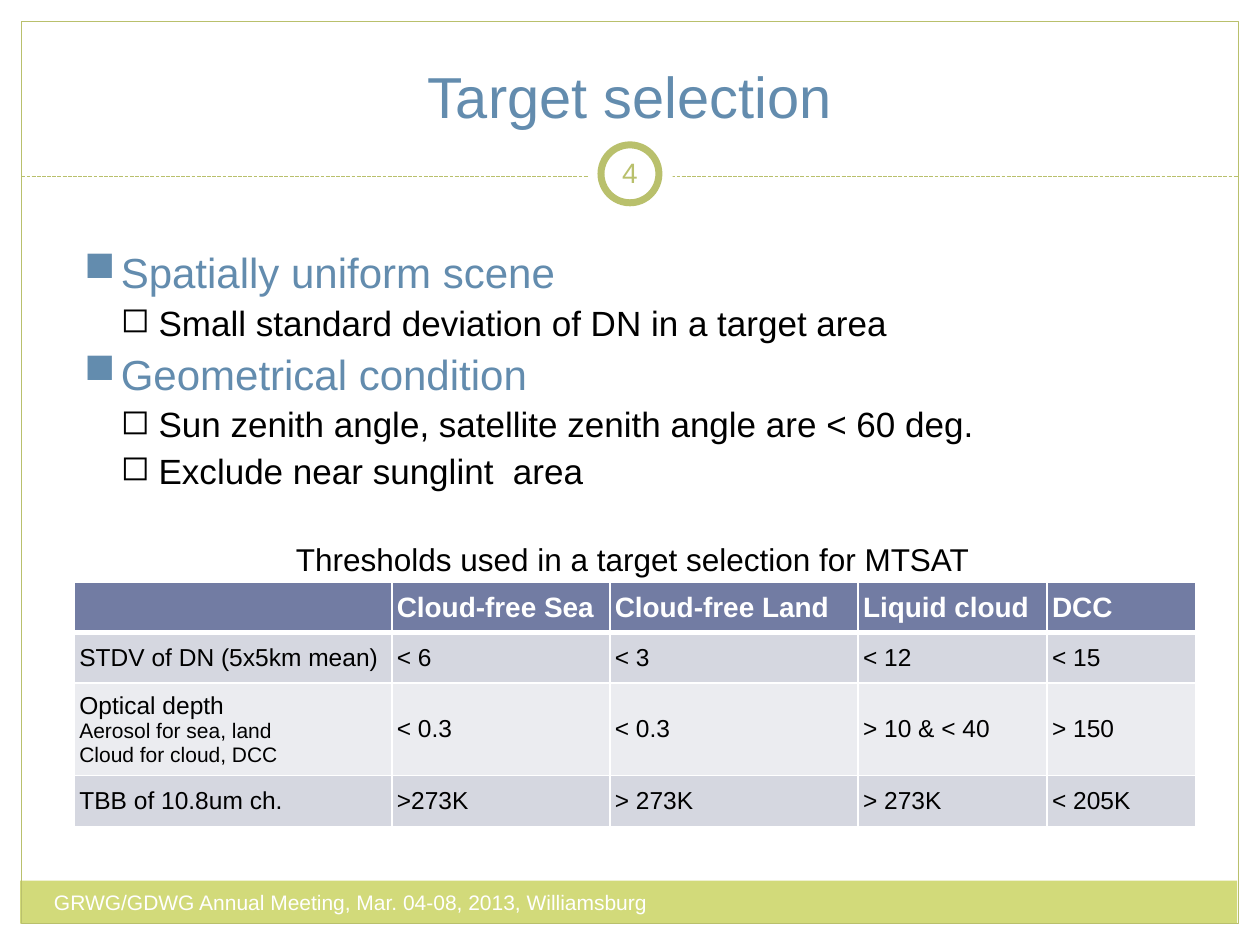
from lxml.etree import SubElement
from pptx import Presentation
from pptx.dml.color import RGBColor
from pptx.enum.dml import MSO_LINE
from pptx.enum.shapes import MSO_CONNECTOR, MSO_SHAPE
from pptx.enum.text import MSO_ANCHOR, PP_ALIGN
from pptx.oxml.ns import qn
from pptx.util import Inches, Pt

COLORS = {
    "white": "FFFFFF", "black": "000000", "blue": "638CAE",
    "olive": "B9C06C", "lime": "D2DA7A",
    "header": "727CA3", "odd": "D5D7E0", "even": "EBECF0",
}
# The page is a grid of 100 columns by 75 rows
COLUMNS, ROWS = 100, 75
UNIT = Inches(0.1)


def grid(*cells):
    return [round(cell * UNIT) for cell in cells]


def write(frame, lines, align=PP_ALIGN.LEFT, bold=False):
    """Fill a text frame with (text, size, color) lines."""
    for index, (text, size, color) in enumerate(lines):
        para = frame.add_paragraph() if index else frame.paragraphs[0]
        para.text = text
        para.alignment = align
        para.font.name = "Arial"
        para.font.size = Pt(size)
        para.font.bold = bold
        para.font.color.rgb = RGBColor.from_string(COLORS[color])


deck = Presentation()
deck.slide_width, deck.slide_height = grid(COLUMNS, ROWS)
page = deck.slides.add_slide(deck.slide_layouts[6])

# Footer band, page frame, divider and number ring
rule = page.shapes.add_connector(MSO_CONNECTOR.STRAIGHT, *grid(1.7, 14, 98.3, 14))
rule.line.color.rgb = RGBColor.from_string(COLORS["olive"])
rule.line.width = Pt(0.75)
rule.line.dash_style = MSO_LINE.SQUARE_DOT
SubElement(rule._element.spPr, qn("a:effectLst"))

decorations = [
    (MSO_SHAPE.RECTANGLE, (1.6, 69.9, 96.6, 3.4), "lime", None),
    (MSO_SHAPE.RECTANGLE, (1.7, 1.7, 96.6, 71.6), None, 0.75),
    (MSO_SHAPE.OVAL, (46.7, 10.5, 6.7, 6.7), "white", None),
    (MSO_SHAPE.OVAL, (47.7, 11.5, 4.6, 4.6), "white", 4),
]
for preset, area, fill, width in decorations:
    shape = page.shapes.add_shape(preset, *grid(*area))
    shape.shadow.inherit = False
    if fill:
        shape.fill.solid()
        shape.fill.fore_color.rgb = RGBColor.from_string(COLORS[fill])
    else:
        shape.fill.background()
    if width:
        shape.line.color.rgb = RGBColor.from_string(COLORS["olive"])
        shape.line.width = Pt(width)
    else:
        shape.line.fill.background()

# Title, caption, footer and page number
labels = [
    ("Target selection", 33, "blue", (3.3, 2.5, 93.3, 8.3), PP_ALIGN.CENTER, MSO_ANCHOR.BOTTOM),
    ("Thresholds used in a target selection for MTSAT", 18, "black",
     (22.5, 42.4, 56, 4), PP_ALIGN.LEFT, MSO_ANCHOR.TOP),
    ("GRWG/GDWG Annual Meeting, Mar. 04-08, 2013, Williamsburg", 12, "white",
     (3.3, 70.1, 60.1, 4), PP_ALIGN.LEFT, MSO_ANCHOR.TOP),
    ("4", 16, "olive", (47.5, 11.3, 5, 4.8), PP_ALIGN.CENTER, MSO_ANCHOR.MIDDLE),
]
for text, size, color, area, align, anchor in labels:
    frame = page.shapes.add_textbox(*grid(*area)).text_frame
    frame.word_wrap = True
    frame.vertical_anchor = anchor
    write(frame, [(text, size, color)], align)

# Bulleted criteria: headings and their details
criteria = [
    ("Spatially uniform scene", 24, "blue"),
    ("Small standard deviation of DN in a target area", 20, "black"),
    ("Geometrical condition", 24, "blue"),
    ("Sun zenith angle, satellite zenith angle are < 60 deg.", 20, "black"),
    ("Exclude near sunglint  area", 20, "black"),
]
frame = page.shapes.add_textbox(*grid(5.7, 18.7, 73.2, 21)).text_frame
frame.word_wrap = False
write(frame, criteria)
for para, (_, _, color) in zip(frame.paragraphs, criteria):
    margin, indent, mark = (2.9, -2.9, "■") if color == "blue" else (5.9, -3, "◻")
    para.line_spacing = 1.1
    properties = para._p.get_or_add_pPr()
    for name, length in zip(("marL", "indent"), grid(margin, indent)):
        properties.set(name, str(length))
    SubElement(properties, qn("a:buChar"), char=mark)

# Threshold table
thresholds = [
    ["", "Cloud-free Sea", "Cloud-free Land", "Liquid cloud", "DCC"],
    ["STDV of DN (5x5km mean)", "< 6", "< 3", "< 12", "< 15"],
    ["Optical depth\nAerosol for sea, land\nCloud for cloud, DCC",
     "< 0.3", "< 0.3", "> 10 & < 40", "> 150"],
    ["TBB of 10.8um ch.", ">273K", "> 273K", "> 273K", "< 205K"],
]
widths = grid(25.2, 17.3, 19.7, 15, 11.8)
heights = grid(4.0, 4.0, 6.9, 4.1)
table = page.shapes.add_table(
    len(heights), len(widths), *grid(5.9, 46.2), sum(widths), sum(heights)).table
for column, width in zip(table.columns, widths):
    column.width = width
for row, height in zip(table.rows, heights):
    row.height = height

for r, values in enumerate(thresholds):
    fill = "header" if r == 0 else "odd" if r % 2 else "even"
    for c, value in enumerate(values):
        cell = table.cell(r, c)
        cell.vertical_anchor = MSO_ANCHOR.MIDDLE
        cell.margin_left = cell.margin_right = Inches(0.04)
        cell.margin_top = cell.margin_bottom = Inches(0.05)
        # Notes below the first line of a cell are smaller
        first, *notes = value.split("\n")
        size, color = (16, "white") if r == 0 else (14, "black")
        lines = [(first, size, color)] + [(note, 12, color) for note in notes]
        write(cell.text_frame, lines, bold=r == 0)
        # Borders come before the fill in the cell properties
        properties = cell._tc.get_or_add_tcPr()
        for side in ("lnL", "lnR", "lnT", "lnB"):
            thick = (r, side) in ((0, "lnB"), (1, "lnT"))
            border = SubElement(properties, qn(f"a:{side}"), w=str(Pt(3 if thick else 1)))
            paint = SubElement(border, qn("a:solidFill"))
            SubElement(paint, qn("a:srgbClr"), val=COLORS["white"])
        cell.fill.solid()
        cell.fill.fore_color.rgb = RGBColor.from_string(COLORS[fill])

deck.save("out.pptx")
